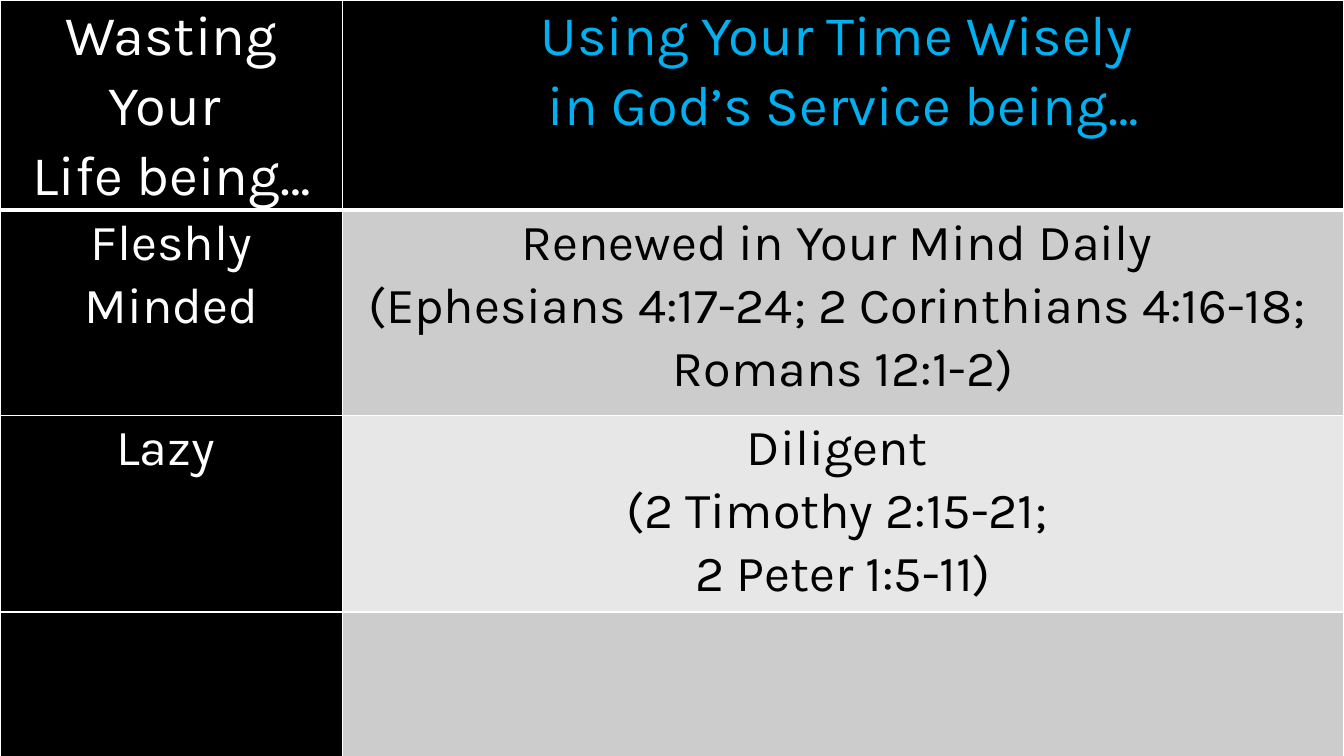
from dataclasses import dataclass

from lxml.etree import SubElement
from pptx import Presentation
from pptx.dml.color import RGBColor
from pptx.enum.text import PP_ALIGN
from pptx.oxml.ns import qn
from pptx.util import Inches, Pt


@dataclass(frozen=True)
class Theme:
    font: str = "Karla"
    head_size: int = 40
    body_size: int = 36
    line_spacing: float = 1.07
    inset: float = 0.07
    dark: str = "000000"
    light: str = "FFFFFF"
    accent: str = "00B0F0"
    bands: tuple = ("CCCCCC", "E7E7E7")
    rule: int = 1
    head_rule: int = 3


THEME = Theme()
WIDTH, HEIGHT = 13.33, 7.5
COL_SHARES = (0.255, 0.745)
ROW_SHARES = (0.21, 0.272, 0.26, 0.256)

ROWS = [
    (["Wasting Your ", "Life being…"],
     ["Using Your Time Wisely ", "in God’s Service being…"]),
    (["Fleshly Minded"],
     ["Renewed in Your Mind Daily ",
      "(Ephesians 4:17-24; 2 Corinthians 4:16-18; ",
      "Romans 12:1-2)"]),
    (["Lazy "],
     ["Diligent ", "(2 Timothy 2:15-21; ", "2 Peter 1:5-11)"]),
    ([], []),
]


def set_borders(cell, top, bottom):
    """Rule all four sides; must run before the fill, which follows in tcPr."""
    tc_pr = cell._tc.get_or_add_tcPr()
    sides = {"L": THEME.rule, "R": THEME.rule, "T": top, "B": bottom}
    for side, width in sides.items():
        ln = SubElement(tc_pr, qn(f"a:ln{side}"), w=str(Pt(width)))
        fill = SubElement(ln, qn("a:solidFill"))
        SubElement(fill, qn("a:srgbClr"), val=THEME.light)


def write_cell(cell, lines, size, color):
    cell.margin_left = cell.margin_right = Inches(THEME.inset)
    cell.margin_top = cell.margin_bottom = 0
    tf = cell.text_frame
    for i, line in enumerate(lines):
        p = tf.paragraphs[0] if i == 0 else tf.add_paragraph()
        p.alignment = PP_ALIGN.CENTER
        p.line_spacing = THEME.line_spacing
        r = p.add_run()
        r.text = line
        r.font.name = THEME.font
        r.font.size = Pt(size)
        r.font.color.rgb = RGBColor.from_string(color)


def cell_colors(row, col):
    """Return the fill and text colours of a cell."""
    if col == 0:
        return THEME.dark, THEME.light
    if row == 0:
        return THEME.dark, THEME.accent
    return THEME.bands[(row - 1) % 2], THEME.dark


def add_comparison(s, left, top, width, height):
    frame = s.shapes.add_table(len(ROWS), len(COL_SHARES), Inches(left),
                               Inches(top), Inches(width), Inches(height))
    table = frame.table
    for column, share in zip(table.columns, COL_SHARES):
        column.width = Inches(width * share)
    for row, share in zip(table.rows, ROW_SHARES):
        row.height = Inches(height * share)

    for i, texts in enumerate(ROWS):
        size = THEME.head_size if i == 0 else THEME.body_size
        for j, lines in enumerate(texts):
            cell = table.cell(i, j)
            fill, color = cell_colors(i, j)
            set_borders(cell,
                        top=THEME.head_rule if i == 1 else THEME.rule,
                        bottom=THEME.head_rule if i == 0 else THEME.rule)
            cell.fill.solid()
            cell.fill.fore_color.rgb = RGBColor.from_string(fill)
            write_cell(cell, lines, size, color)


def main():
    prs = Presentation()
    prs.slide_width, prs.slide_height = Inches(WIDTH), Inches(HEIGHT)
    s = prs.slides.add_slide(prs.slide_layouts[6])
    s.background.fill.solid()
    s.background.fill.fore_color.rgb = RGBColor.from_string(THEME.dark)
    add_comparison(s, 0, 0, WIDTH, HEIGHT)
    prs.save("out.pptx")


if __name__ == "__main__":
    main()
